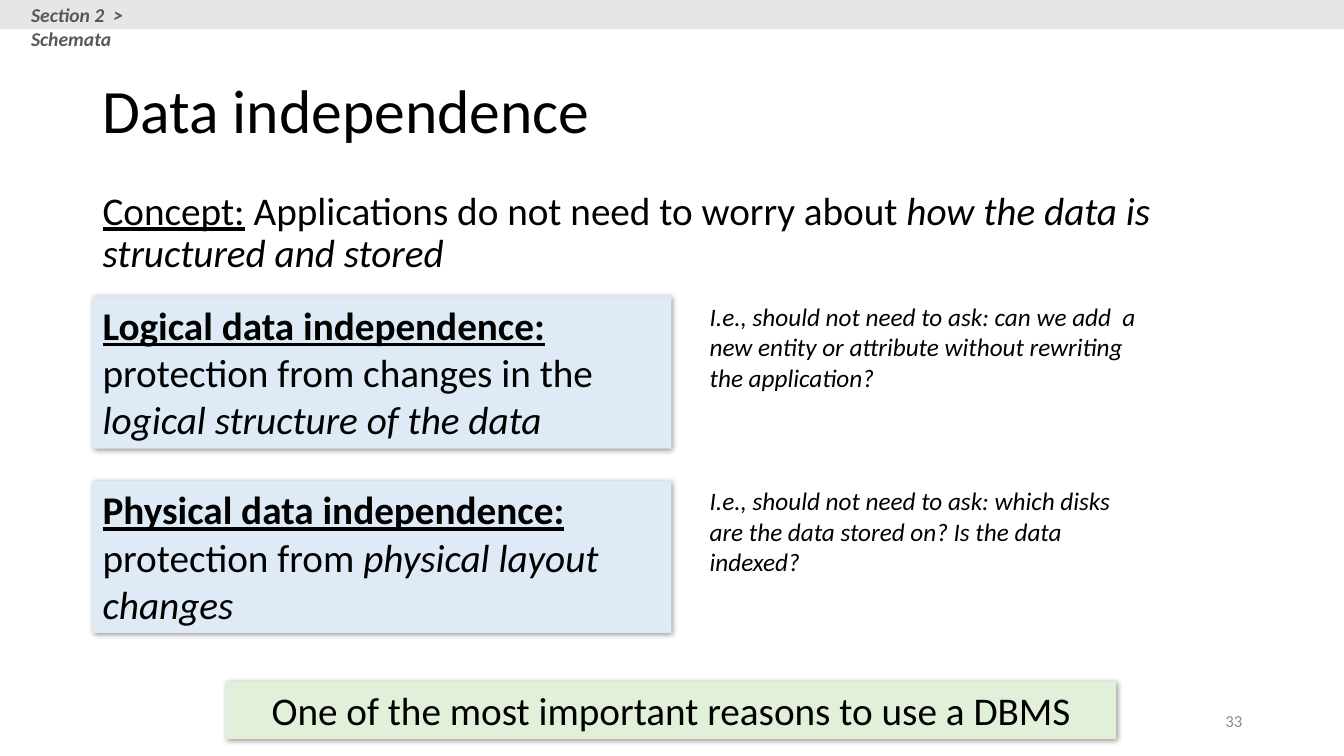
from lxml.etree import SubElement
from pptx import Presentation
from pptx.dml.color import RGBColor
from pptx.enum.shapes import MSO_SHAPE as Kind
from pptx.enum.text import MSO_ANCHOR as Anchor, PP_ALIGN as Align
from pptx.oxml.ns import qn
from pptx.util import Pt

PX = 9144
HEAD = {"bold": True, "underline": True}
SLANT = {"italic": True}


def emu(*px):
    """Turn px lengths, 100 to the inch, into EMU."""
    return [n * PX for n in px]


def hue(code):
    """Turn a hex string into a colour."""
    return RGBColor.from_string(code)


def fill_text(shape, runs, size, color="000000", anchor=Anchor.TOP, **para):
    """Write one paragraph of (text, format) runs into a shape."""
    frame = shape.text_frame
    frame.word_wrap = True
    frame.vertical_anchor = anchor
    line = frame.paragraphs[0]
    for key, value in {"alignment": Align.LEFT, **para}.items():
        setattr(line, key, value)
    for text, style in runs:
        run = line.add_run()
        run.text = text
        run.font.color.rgb = hue(color)
        for key, value in {"name": "Calibri", "size": Pt(size), **style}.items():
            setattr(run.font, key, value)


def add_text(slide, box, runs, size, **look):
    """Add a text box."""
    fill_text(slide.shapes.add_textbox(*emu(*box)), runs, size, **look)


def add_rect(slide, box, color):
    """Add a plain rectangle without line or shadow."""
    rect = slide.shapes.add_shape(Kind.RECTANGLE, *emu(*box))
    rect.shadow.inherit = False
    rect.fill.solid()
    rect.fill.fore_color.rgb = hue(color)
    rect.line.fill.background()
    return rect


def add_card(slide, box, color, runs, **look):
    """Add a rectangle with a soft shadow and large text."""
    card = add_rect(slide, box, color)
    effects = card._element.spPr.find(qn("a:effectLst"))
    shade = SubElement(effects, qn("a:outerShdw"), blurRad=str(Pt(4)),
                       dist=str(Pt(1)), dir="2700000", algn="tl", rotWithShape="0")
    tint = SubElement(shade, qn("a:srgbClr"), val="000000")
    SubElement(tint, qn("a:alpha"), val="40000")
    fill_text(card, runs, 28, **look)


def main():
    """Build the slide and save it."""
    deck = Presentation()
    deck.slide_width, deck.slide_height = emu(1333, 750)
    slide = deck.slides.add_slide(deck.slide_layouts[6])

    add_text(slide, (92, 40, 1150, 145), [("Data independence", {})], 44,
             anchor=Anchor.MIDDLE, line_spacing=0.9)
    concept = [("Concept:", {"underline": True}),
               (" Applications do not need to worry about ", {}),
               ("how the data is structured and stored", SLANT)]
    add_text(slide, (92, 185, 1150, 476), concept, 28,
             line_spacing=0.9, space_before=Pt(10))

    kinds = [
        (294, "Logical", "protection from changes in the ",
         "logical structure of the data", 445,
         "I.e., should not need to ask: can we add  a new entity or attribute "
         "without rewriting the application?"),
        (477, "Physical", "protection from ", "physical layout changes", 427,
         "I.e., should not need to ask: which disks are the data stored on? "
         "Is the data indexed?"),
    ]
    for top, name, plain, stress, width, note in kinds:
        runs = [(f"{name} data independence:", HEAD), (" ", {"bold": True}),
                (plain, {}), (stress, SLANT)]
        add_card(slide, (92, top, 574, 151), "DEEBF7", runs)
        add_text(slide, (694, top, width, 101), [(note, SLANT)], 18)

    add_card(slide, (224, 676, 883, 57), "E2F0D9",
             [("One of the most important reasons to use a DBMS", {})],
             alignment=Align.CENTER)
    add_text(slide, (942, 695, 300, 40), [("33", {})], 12, color="8C8C8C",
             anchor=Anchor.MIDDLE, alignment=Align.RIGHT)
    add_rect(slide, (0, 0, 1333, 29), "E7E6E6")
    add_text(slide, (21, -2, 150, 34),
             [("Section 2  >  Schemata", {"bold": True, "italic": True})], 14,
             color="595959")
    deck.save("out.pptx")


if __name__ == "__main__":
    main()
